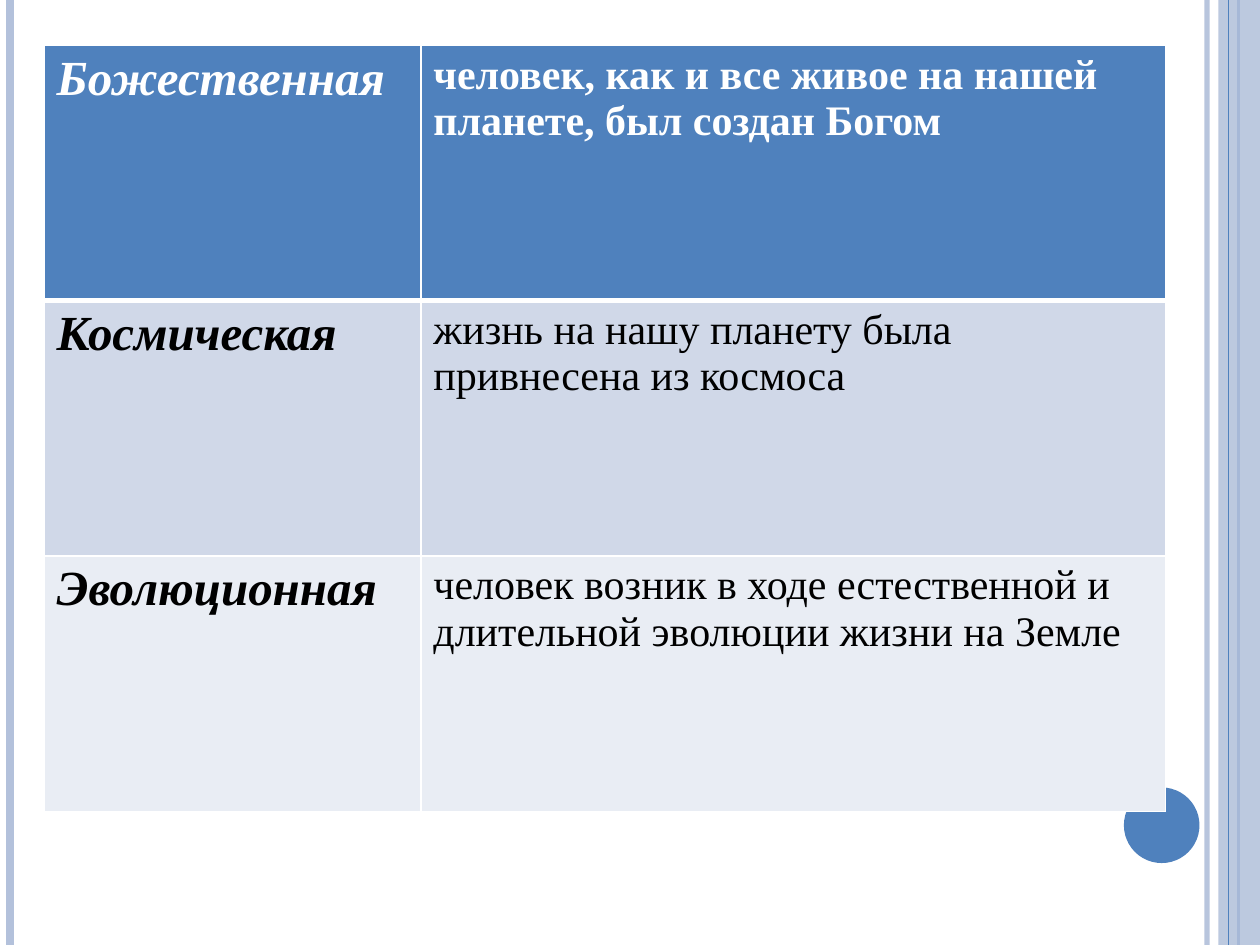
import pptx
import pptx.dml.color
import pptx.enum.shapes
import pptx.oxml
import pptx.oxml.ns
import pptx.util
from pptx.util import Inches

RGBColor = pptx.dml.color.RGBColor
WHITE = RGBColor(0xFF, 0xFF, 0xFF)
BLACK = RGBColor(0, 0, 0)
BLUE = RGBColor(0x4F, 0x81, 0xBD)
PALE_BLUE = RGBColor(0xB3, 0xC1, 0xDB)
BAND_DARK = RGBColor(0xD0, 0xD8, 0xE8)
BAND_LIGHT = RGBColor(0xE9, 0xED, 0xF4)
FONT = "Times New Roman"
NS = pptx.oxml.ns.nsdecls("a")

THEORIES = [
    ("Божественная", "человек, как и все живое на нашей планете, был создан Богом"),
    ("Космическая", "жизнь на нашу планету была привнесена из космоса"),
    ("Эволюционная", "человек возник в ходе естественной и длительной эволюции жизни на Земле"),
]
ROW_FILLS = [BLUE, BAND_DARK, BAND_LIGHT]


def set_alpha(element, percent):
    """Make the solid colour inside element partly transparent."""
    color = element.find(".//" + pptx.oxml.ns.qn("a:srgbClr"))
    color.append(pptx.oxml.parse_xml(f'<a:alpha {NS} val="{percent * 1000}"/>'))


def add_stripe(slide, x, height, color, width, alpha=None):
    line = slide.shapes.add_connector(
        pptx.enum.shapes.MSO_CONNECTOR.STRAIGHT, Inches(x), 0, Inches(x), height)
    line.line.color.rgb = color
    line.line.width = pptx.util.Pt(width)
    if alpha:
        set_alpha(line.line._get_or_add_ln(), alpha)
    line._element.spPr.append(pptx.oxml.parse_xml(f"<a:effectLst {NS}/>"))


def add_plain_shape(slide, kind, left, top, width, height, color):
    s = slide.shapes.add_shape(kind, left, top, width, height)
    s.shadow.inherit = False
    s.fill.solid()
    s.fill.fore_color.rgb = color
    s.line.fill.background()
    return s


def add_frame(slide, width, height):
    """Draw the side stripes, the right band and the disc."""
    shapes = pptx.enum.shapes.MSO_SHAPE
    add_stripe(slide, 9.58, height, PALE_BLUE, 3, alpha=93)
    add_stripe(slide, 0.08, height, PALE_BLUE, 4.5)
    add_stripe(slide, 9.83, height, BLUE, 1.5)
    band_width = Inches(0.33)
    band = add_plain_shape(slide, shapes.RECTANGLE, width - band_width, 0,
                           band_width, height, PALE_BLUE)
    set_alpha(band._element.spPr, 87)
    add_stripe(slide, 9.75, height, BLUE, 0.75)
    add_plain_shape(slide, shapes.OVAL, Inches(8.92), Inches(6.25),
                    Inches(0.6), Inches(0.6), BLUE)


def set_borders(cell, **widths):
    tcPr = cell._tc.get_or_add_tcPr()
    for side in "LRTB":
        width = pptx.util.Pt(widths.get(side, 1))
        tcPr.append(pptx.oxml.parse_xml(
            f'<a:ln{side} {NS} w="{width}"><a:solidFill>'
            f'<a:srgbClr val="{WHITE}"/></a:solidFill></a:ln{side}>'))


def add_theory_table(slide, left, top, width, height):
    rows = len(THEORIES)
    table = slide.shapes.add_table(rows, 2, left, top, width, height).table
    table.columns[0].width = Inches(2.99)
    table.columns[1].width = width - Inches(2.99)
    for i, texts in enumerate(THEORIES):
        table.rows[i].height = height // rows
        header = i == 0
        for j, text in enumerate(texts):
            name = j == 0
            cell = table.cell(i, j)
            set_borders(cell, T=3 if i == 1 else 1, B=3 if header else 1)
            cell.fill.solid()
            cell.fill.fore_color.rgb = ROW_FILLS[i]
            cell.text_frame.text = text
            font = cell.text_frame.paragraphs[0].runs[0].font
            font.name = FONT
            font.size = pptx.util.Pt(28 if name else 24)
            font.bold = name or header
            font.italic = name
            font.color.rgb = WHITE if header else BLACK


def main():
    prs = pptx.Presentation()
    prs.slide_width, prs.slide_height = Inches(10), Inches(7.5)
    slide = prs.slides.add_slide(prs.slide_layouts[6])
    add_frame(slide, prs.slide_width, prs.slide_height)
    add_theory_table(slide, Inches(0.35), Inches(0.36), Inches(8.9), Inches(6.08))
    prs.save("out.pptx")


if __name__ == "__main__":
    main()
